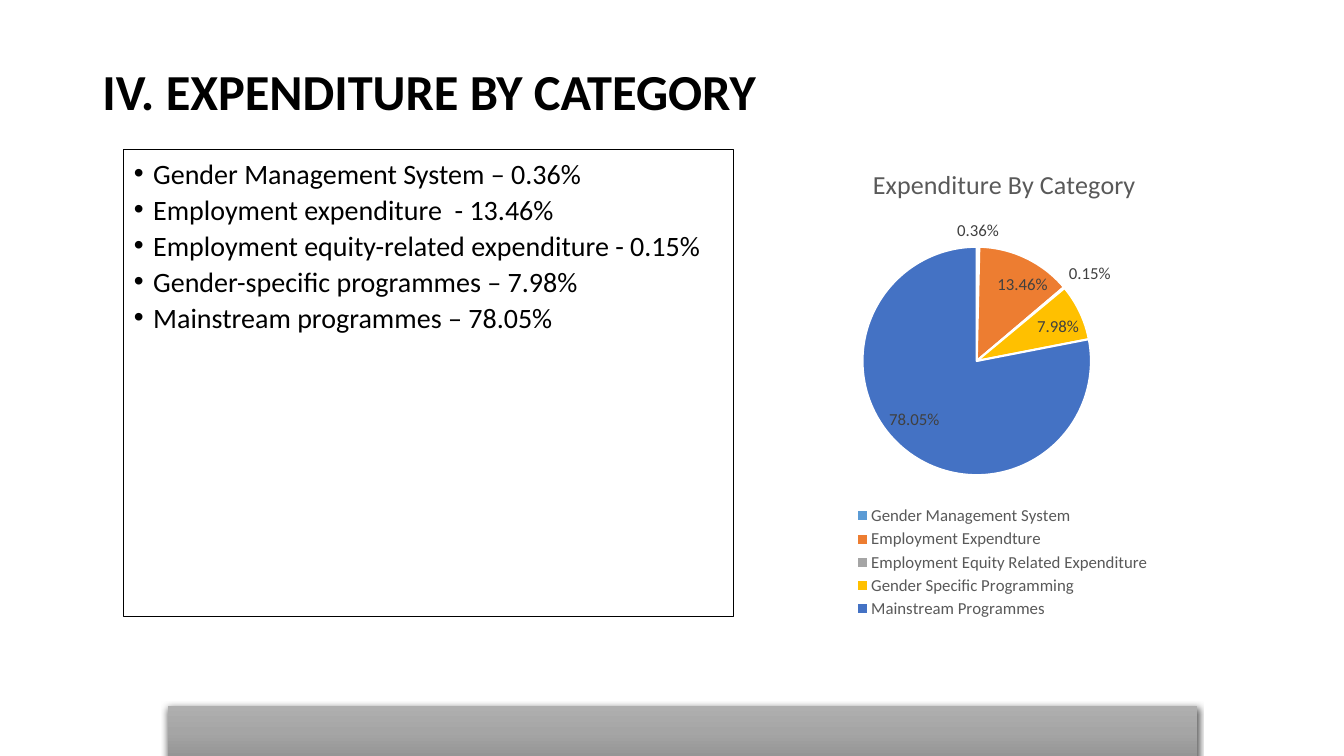
from copy import deepcopy
from dataclasses import dataclass

from lxml.etree import SubElement
from pptx import Presentation
from pptx.chart.data import CategoryChartData
from pptx.dml.color import RGBColor
from pptx.enum.chart import XL_CHART_TYPE, XL_LABEL_POSITION, XL_LEGEND_POSITION
from pptx.enum.shapes import MSO_SHAPE
from pptx.enum.text import MSO_ANCHOR, MSO_AUTO_SIZE, PP_ALIGN
from pptx.oxml import parse_xml
from pptx.oxml.ns import nsdecls, qn
from pptx.util import Inches, Pt

SLIDE_WIDTH, SLIDE_HEIGHT = Inches(13.33), Inches(7.5)
COLUMNS, ROWS = 160, 90


@dataclass(frozen=True)
class Theme:
    font: str = "Calibri"
    ink: str = "000000"
    caption: str = "595959"
    label: str = "404040"
    slice_edge: str = "FFFFFF"
    band: tuple[str, ...] = ("AFAFAF", "A5A5A5", "939393")
    title_size: float = 36
    body_size: float = 20
    chart_title_size: float = 18.6
    chart_size: float = 12
    line_spacing: float = 1.07


@dataclass(frozen=True)
class Area:
    """A place on the grid, in columns and rows."""
    column: float
    row: float
    columns: float
    rows: float

    def box(self) -> tuple[int, int, int, int]:
        across, down = SLIDE_WIDTH / COLUMNS, SLIDE_HEIGHT / ROWS
        return (round(self.column * across), round(self.row * down),
                round(self.columns * across), round(self.rows * down))


@dataclass(frozen=True)
class Category:
    bullet: str
    legend: str
    share: float
    color: str


@dataclass(frozen=True)
class Layout:
    """A place inside the chart, in shares of its size."""
    x: float
    y: float
    w: float | None = None
    h: float | None = None


THEME = Theme()
TITLE_AREA = Area(11, 4.8, 138, 17.4)
LIST_AREA = Area(14.75, 17.75, 72.6, 55.6)
BAND_AREA = Area(20, 84, 122.5, 6.36)
CHART_AREA = Area(85, 17, 68, 57.1)

CATEGORIES = (
    Category("Gender Management System – 0.36%",
             "Gender Management System", 0.0036, "5B9BD5"),
    Category("Employment expenditure  - 13.46%",
             "Employment Expendture", 0.1346, "ED7D31"),
    Category("Employment equity-related expenditure - 0.15%",
             "Employment Equity Related Expenditure", 0.0015, "A5A5A5"),
    Category("Gender-specific programmes – 7.98%",
             "Gender Specific Programming", 0.0798, "FFC000"),
    Category("Mainstream programmes – 78.05%",
             "Mainstream Programmes", 0.7805, "4472C4"),
)


def place(shape, area: Area) -> None:
    shape.left, shape.top, shape.width, shape.height = area.box()


def style_font(font, size: float, color: str, bold: bool = False) -> None:
    font.name, font.size, font.bold = THEME.font, Pt(size), bold
    font.color.rgb = RGBColor.from_string(color)


def write(paragraph, text: str, size: float, color: str, bold: bool = False) -> None:
    run = paragraph.add_run()
    run.text = text
    style_font(run.font, size, color, bold)


def add_title(slide, text: str) -> None:
    title = slide.shapes.title
    place(title, TITLE_AREA)
    frame = title.text_frame
    frame.auto_size = MSO_AUTO_SIZE.NONE
    frame.vertical_anchor = MSO_ANCHOR.MIDDLE
    frame.margin_bottom = Inches(0.54)
    paragraph = frame.paragraphs[0]
    paragraph.alignment = PP_ALIGN.LEFT
    paragraph.line_spacing = THEME.line_spacing
    write(paragraph, text, THEME.title_size, THEME.ink, bold=True)


def add_list(slide) -> None:
    body = slide.placeholders[1]
    place(body, LIST_AREA)
    body.line.color.rgb = RGBColor.from_string(THEME.ink)
    body.line.width = Pt(0.75)
    frame = body.text_frame
    frame.auto_size = MSO_AUTO_SIZE.NONE
    for index, category in enumerate(CATEGORIES):
        paragraph = frame.add_paragraph() if index else frame.paragraphs[0]
        paragraph.alignment = PP_ALIGN.JUSTIFY
        paragraph.line_spacing = THEME.line_spacing
        paragraph.space_before = paragraph.space_after = Pt(0)
        properties = paragraph._p.get_or_add_pPr()
        properties.set("marL", str(Inches(0.19)))
        properties.set("indent", str(-Inches(0.19)))
        SubElement(properties, qn("a:buFont")).set("typeface", "Arial")
        SubElement(properties, qn("a:buChar")).set("char", "•")
        write(paragraph, category.bullet, THEME.body_size, THEME.ink)


def add_band(slide) -> None:
    band = slide.shapes.add_shape(MSO_SHAPE.RECTANGLE, *BAND_AREA.box())
    band.line.fill.background()
    band.fill.gradient()
    band.fill.gradient_angle = 270
    stop_list = band._element.spPr.find(".//" + qn("a:gsLst"))
    stop_list.append(deepcopy(stop_list[-1]))
    for index, (stop, color) in enumerate(zip(band.fill.gradient_stops, THEME.band)):
        stop.position = index / (len(THEME.band) - 1)
        stop.color.rgb = RGBColor.from_string(color)
    band.shadow.inherit = False
    band._element.spPr.find(qn("a:effectLst")).append(parse_xml(
        f'<a:outerShdw {nsdecls("a")} blurRad="{Pt(4.5)}" dist="{Pt(1.5)}" '
        'dir="5400000" algn="ctr" rotWithShape="0"><a:srgbClr val="000000">'
        '<a:alpha val="63000"/></a:srgbClr></a:outerShdw>'))


def set_layout(element, layout: Layout, inner: bool = False) -> None:
    """Give a chart part a fixed place in the chart."""
    for old in element.findall(qn("c:layout")):
        element.remove(old)
    values = {"x": layout.x, "y": layout.y, "w": layout.w, "h": layout.h}
    target = '<c:layoutTarget val="inner"/>' if inner else ""
    modes = '<c:xMode val="edge"/><c:yMode val="edge"/>'
    sizes = "".join(f'<c:{key} val="{value}"/>'
                    for key, value in values.items() if value is not None)
    node = parse_xml(f'<c:layout {nsdecls("c")}><c:manualLayout>{target}{modes}{sizes}'
                     '</c:manualLayout></c:layout>')
    leading = [child for child in element
               if child.tag in (qn("c:tx"), qn("c:legendPos"))]
    element.insert(len(leading), node)


def add_pie(slide, heading: str) -> None:
    data = CategoryChartData(number_format="0.00%")
    data.categories = [category.legend for category in CATEGORIES]
    data.add_series(heading, [category.share for category in CATEGORIES])
    chart = slide.shapes.add_chart(XL_CHART_TYPE.PIE, *CHART_AREA.box(), data).chart
    style_font(chart.font, THEME.chart_size, THEME.caption)

    chart.has_title = True
    write(chart.chart_title.text_frame.paragraphs[0], heading,
          THEME.chart_title_size, THEME.caption)
    set_layout(chart.chart_title._element, Layout(0.27, 0.04))

    chart.has_legend = True
    chart.legend.position = XL_LEGEND_POSITION.BOTTOM
    chart.legend.include_in_layout = False
    style_font(chart.legend.font, THEME.chart_size, THEME.caption)
    set_layout(chart.legend._element, Layout(0.23, 0.75, 0.55, 0.25))

    plot = chart.plots[0]
    plot.vary_by_categories = True
    set_layout(plot._element.getparent(), Layout(0.26, 0.21, 0.4, 0.49), inner=True)
    series = plot.series[0]
    for index, category in enumerate(CATEGORIES):
        piece = series.points[index].format
        piece.fill.solid()
        piece.fill.fore_color.rgb = RGBColor.from_string(category.color)
        piece.line.color.rgb = RGBColor.from_string(THEME.slice_edge)
        piece.line.width = Pt(1.5)
    labels = series.data_labels
    labels.show_value = True
    labels.number_format, labels.number_format_is_linked = "0.00%", False
    labels.position = XL_LABEL_POSITION.BEST_FIT
    style_font(labels.font, THEME.chart_size, THEME.label)


def main() -> None:
    presentation = Presentation()
    presentation.slide_width, presentation.slide_height = SLIDE_WIDTH, SLIDE_HEIGHT
    slide = presentation.slides.add_slide(presentation.slide_layouts[1])
    add_title(slide, "IV. EXPENDITURE BY CATEGORY")
    add_list(slide)
    add_band(slide)
    add_pie(slide, "Expenditure By Category")
    presentation.save("out.pptx")


if __name__ == "__main__":
    main()
